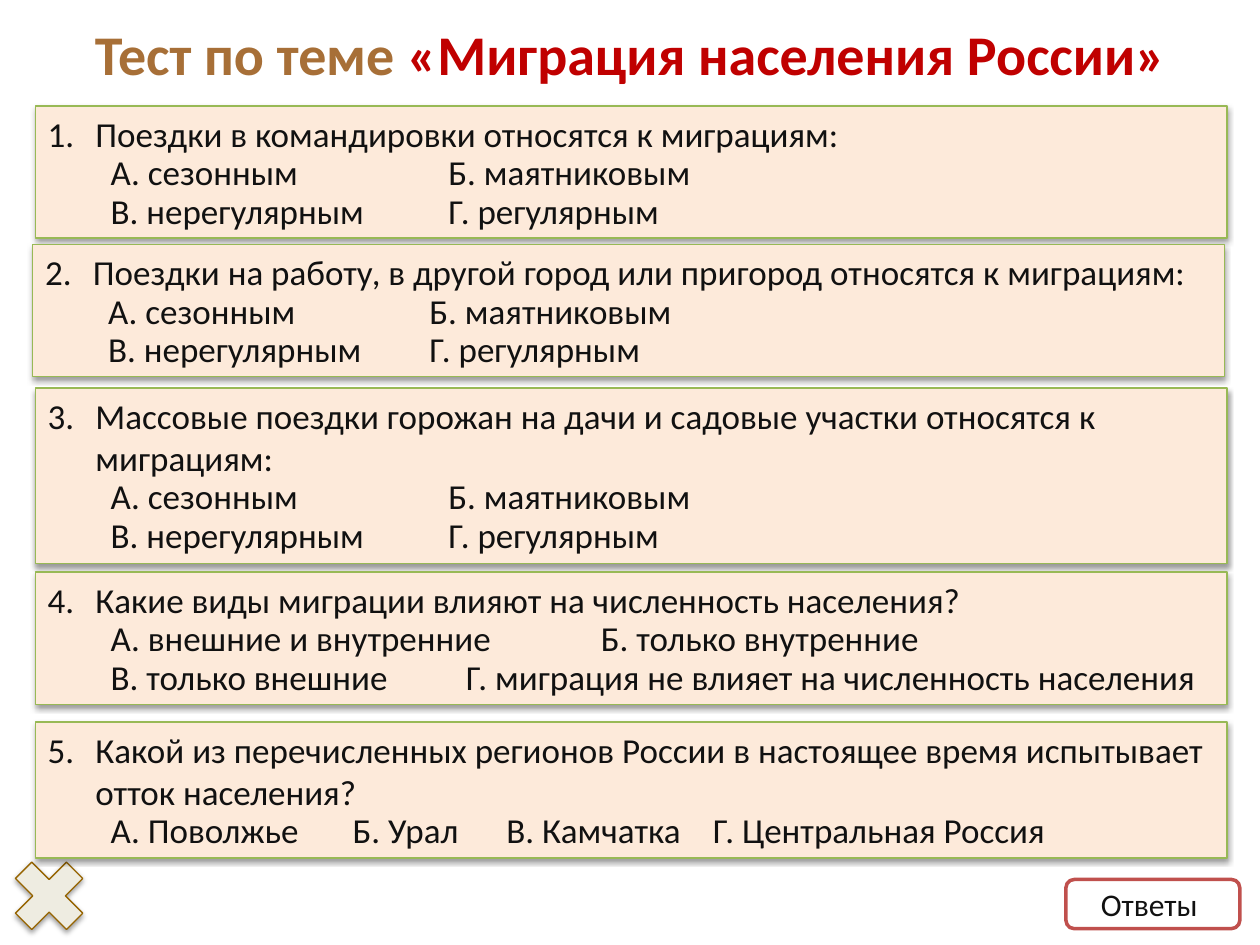
"""Build a quiz slide on population migration in Russia."""
from dataclasses import dataclass

from lxml import etree
from pptx import Presentation
from pptx.dml.color import RGBColor
from pptx.enum.shapes import MSO_SHAPE
from pptx.enum.text import MSO_ANCHOR, PP_ALIGN
from pptx.oxml.ns import qn
from pptx.util import Inches, Pt

RECTANGLE = MSO_SHAPE.RECTANGLE
ROUNDED = MSO_SHAPE.ROUNDED_RECTANGLE
CROSS = MSO_SHAPE.MATH_MULTIPLY
CENTER = PP_ALIGN.CENTER
LEFT = PP_ALIGN.LEFT
MIDDLE = MSO_ANCHOR.MIDDLE
TOP = MSO_ANCHOR.TOP

INK = RGBColor(0x11, 0x11, 0x11)
BROWN = RGBColor(0xA7, 0x6F, 0x37)
RED = RGBColor(0xC0, 0x00, 0x00)
PEACH = RGBColor(0xFD, 0xEA, 0xDA)
GREEN = RGBColor(0x98, 0xB9, 0x55)
SAND = RGBColor(0xEE, 0xEC, 0xE1)
OCHRE = RGBColor(0x96, 0x64, 0x00)
WHITE = RGBColor(0xFF, 0xFF, 0xFF)
BRICK = RGBColor(0xC0, 0x50, 0x4D)
BLACK = RGBColor(0x00, 0x00, 0x00)

FONT = "Calibri"
CARD_LEFT = 0.28
CARD_WIDTH = 9.46
HANGING = 0.38
FIRST_STOP = 0.5


@dataclass(frozen=True)
class OptionRow:
    options: tuple[str, ...]
    stops: tuple[float, ...]


@dataclass(frozen=True)
class Question:
    top: float
    height: float
    wording: str
    rows: tuple[OptionRow, ...]
    left: float = CARD_LEFT


def migration_kinds(stop: float) -> tuple[OptionRow, ...]:
    return (
        OptionRow(("А. сезонным", "Б. маятниковым"), (stop,)),
        OptionRow(("В. нерегулярным", "Г. регулярным"), (stop,)),
    )


QUESTIONS = (
    Question(0.84, 1.05, "Поездки в командировки относятся к миграциям:",
             migration_kinds(3.18)),
    Question(1.94, 1.05,
             "Поездки на работу, в другой город или пригород относятся к миграциям:",
             migration_kinds(3.05), left=0.26),
    Question(3.08, 1.39,
             "Массовые поездки горожан на дачи и садовые участки относятся к миграциям:",
             migration_kinds(3.18)),
    Question(4.54, 1.05, "Какие виды миграции влияют на численность населения?", (
        OptionRow(("А. внешние и внутренние", "Б. только внутренние"), (4.39,)),
        OptionRow(("В. только внешние",
                   "Г. миграция не влияет на численность населения"), (3.32,)),
    )),
    Question(5.73, 1.08,
             "Какой из перечисленных регионов России в настоящее время испытывает "
             "отток населения?", (
                 OptionRow(("А. Поволжье", "Б. Урал", "В. Камчатка",
                            "Г. Центральная Россия"), (2.42, 3.64, 5.28)),
             )),
)


def add_text(paragraph, text: str, *, size: float = 20, color: RGBColor = INK,
             bold: bool = False, align: PP_ALIGN = LEFT) -> None:
    paragraph.alignment = align
    run = paragraph.add_run()
    run.text = text
    run.font.name = FONT
    run.font.size = Pt(size)
    run.font.bold = bold
    run.font.color.rgb = color


def add_color(parent, color: RGBColor):
    return etree.SubElement(parent, qn("a:srgbClr"), val=str(color))


def add_shadow(shape) -> None:
    effects = shape.element.spPr.find(qn("a:effectLst"))
    shadow = etree.SubElement(
        effects, qn("a:outerShdw"), blurRad=str(Pt(3.1)), dist=str(Pt(1.6)),
        dir="5400000", rotWithShape="0")
    etree.SubElement(add_color(shadow, BLACK), qn("a:alpha"), val="38000")


def add_panel(slide, kind: MSO_SHAPE, left: float, top: float, width: float,
              height: float, *, fill: RGBColor, line: RGBColor,
              line_width: float = 0.75, shadow: bool = True):
    panel = slide.shapes.add_shape(
        kind, Inches(left), Inches(top), Inches(width), Inches(height))
    panel.fill.solid()
    panel.fill.fore_color.rgb = fill
    panel.line.color.rgb = line
    panel.line.width = Pt(line_width)
    panel.shadow.inherit = False
    if shadow:
        add_shadow(panel)
    return panel


def number_heading(paragraph, number: int) -> None:
    properties = paragraph._p.get_or_add_pPr()
    properties.set("marL", str(Inches(HANGING)))
    properties.set("indent", str(Inches(-HANGING)))
    add_color(etree.SubElement(properties, qn("a:buClr")), INK)
    etree.SubElement(properties, qn("a:buFont"), typeface=FONT)
    etree.SubElement(properties, qn("a:buAutoNum"), type="arabicPeriod",
                     startAt=str(number))


def add_option_row(frame, row: OptionRow) -> None:
    answers = frame.add_paragraph()
    answers.line_spacing = Pt(22)
    properties = answers._p.get_or_add_pPr()
    etree.SubElement(properties, qn("a:buNone"))
    tabs = etree.SubElement(properties, qn("a:tabLst"))
    for stop in (FIRST_STOP, *row.stops):
        etree.SubElement(tabs, qn("a:tab"), pos=str(Inches(stop)), algn="l")
    add_text(answers, "".join(f"\t{option}" for option in row.options))


def add_question(slide, number: int, question: Question) -> None:
    card = add_panel(slide, RECTANGLE, question.left, question.top, CARD_WIDTH,
                     question.height, fill=PEACH, line=GREEN)
    frame = card.text_frame
    frame.word_wrap = True
    frame.vertical_anchor = TOP
    heading = frame.paragraphs[0]
    number_heading(heading, number)
    add_text(heading, question.wording)
    for row in question.rows:
        add_option_row(frame, row)


def add_title(slide) -> None:
    title = slide.shapes.title
    title.left, title.top = Inches(0.2), Inches(0)
    title.width, title.height = Inches(9.61), Inches(0.84)
    title.text_frame.vertical_anchor = MIDDLE
    heading = title.text_frame.paragraphs[0]
    for text, color in (("Тест по теме ", BROWN),
                        ("«Миграция населения России»", RED)):
        add_text(heading, text, size=32, color=color, bold=True, align=CENTER)


def main() -> None:
    presentation = Presentation()
    presentation.slide_width = Inches(10)
    presentation.slide_height = Inches(7.5)
    slide = presentation.slides.add_slide(
        presentation.slide_layouts.get_by_name("Title Only"))
    add_panel(slide, CROSS, 0, 6.72, 0.78, 0.78, fill=SAND, line=OCHRE)
    add_title(slide)
    for number, question in enumerate(QUESTIONS, start=1):
        add_question(slide, number, question)
    answers_button = add_panel(slide, ROUNDED, 8.46, 6.98, 1.38, 0.39, fill=WHITE,
                               line=BRICK, line_width=2, shadow=False)
    answers_button.text_frame.vertical_anchor = MIDDLE
    add_text(answers_button.text_frame.paragraphs[0], "Ответы ", size=18, align=CENTER)
    presentation.save("out.pptx")


if __name__ == "__main__":
    main()
